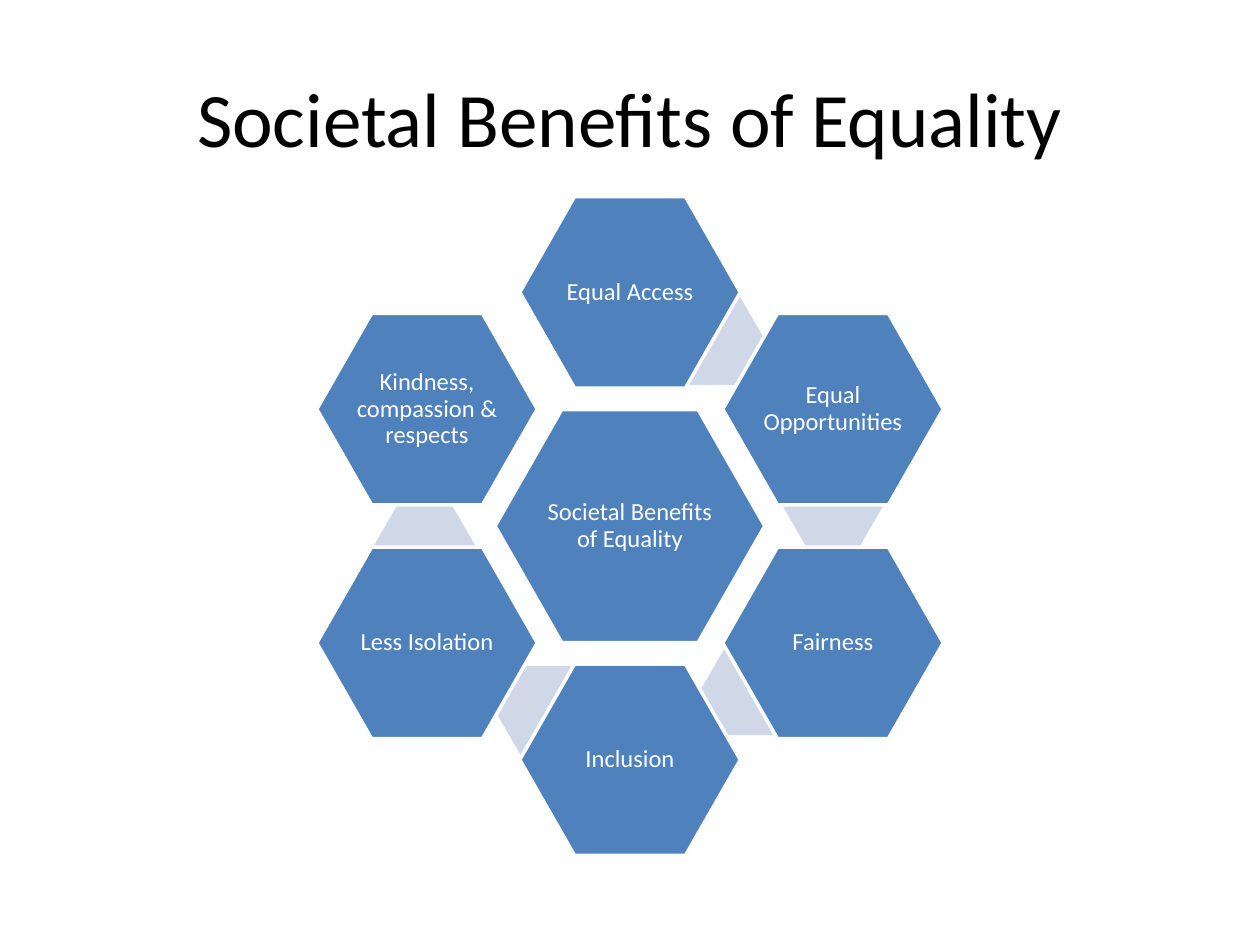
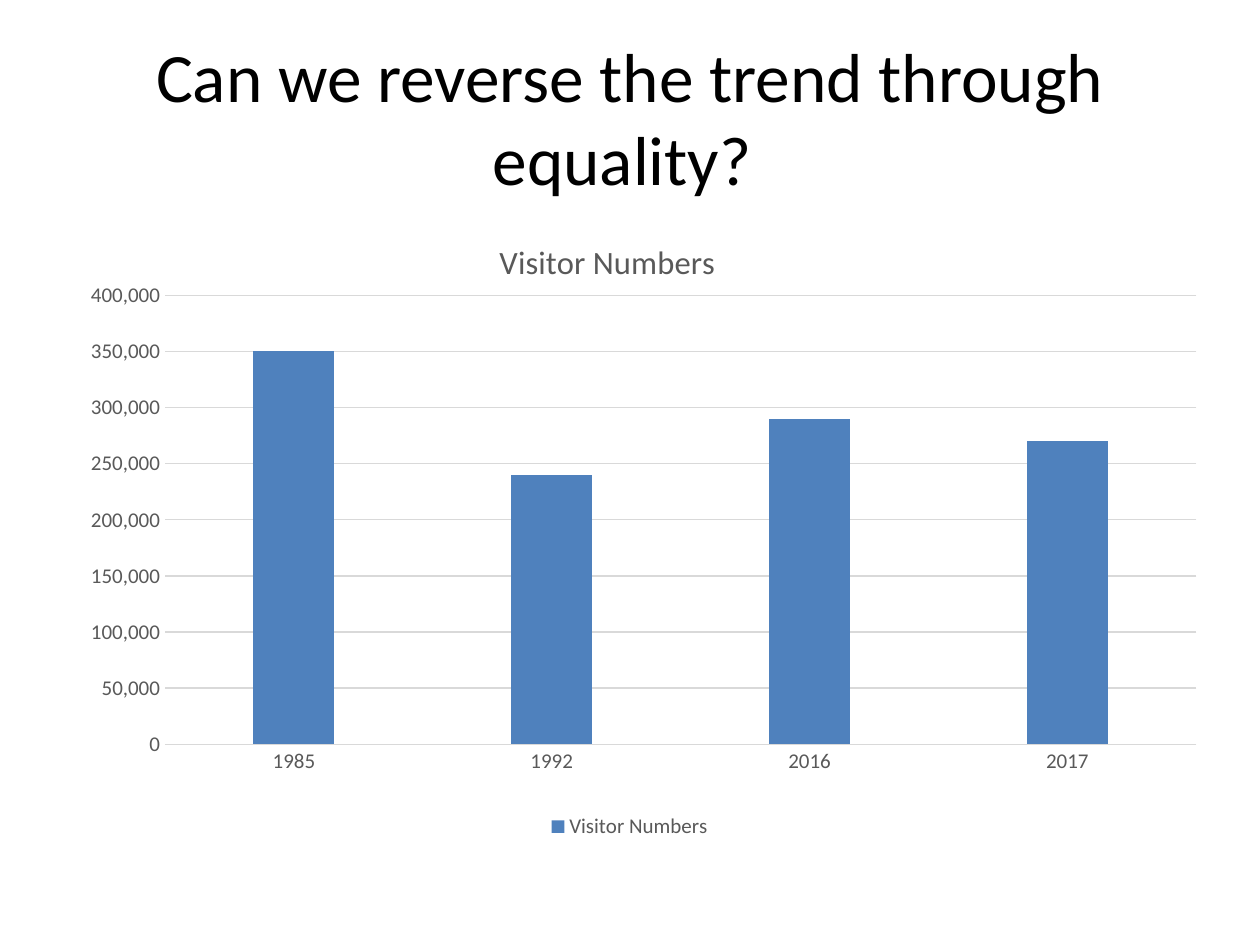
import math

from lxml import etree
from pptx import Presentation
from pptx.chart.data import CategoryChartData
from pptx.dml.color import RGBColor
from pptx.enum.chart import XL_CHART_TYPE, XL_LEGEND_POSITION, XL_TICK_MARK
from pptx.enum.shapes import MSO_SHAPE
from pptx.enum.text import MSO_ANCHOR, MSO_AUTO_SIZE, PP_ALIGN
from pptx.oxml.ns import qn
from pptx.util import Inches, Pt

HEXAGON = MSO_SHAPE.HEXAGON
COLUMNS = XL_CHART_TYPE.COLUMN_CLUSTERED
LEGEND_BOTTOM = XL_LEGEND_POSITION.BOTTOM
NO_TICKS = XL_TICK_MARK.NONE
MIDDLE = MSO_ANCHOR.MIDDLE
NO_AUTOFIT = MSO_AUTO_SIZE.NONE
CENTER = PP_ALIGN.CENTER

FONT = "Calibri"
BLACK = RGBColor(0x00, 0x00, 0x00)
WHITE = RGBColor(0xFF, 0xFF, 0xFF)
BLUE = RGBColor(0x4F, 0x81, 0xBD)
PALE_BLUE = RGBColor(0xD0, 0xD8, 0xE8)
GREY = RGBColor(0x59, 0x59, 0x59)
GRID_GREY = RGBColor(0xD9, 0xD9, 0xD9)

TITLE_BOX = (0.5, 0.3, 9, 1.25)
TITLE_ONLY = 5

BENEFITS = [
    ("Equal Access", (0.67, -1.47)),
    ("Equal Opportunities", (1.61, -0.17)),
    ("Fairness", (0.96, 1.31)),
    ("Inclusion", (-0.67, 1.46)),
    ("Less Isolation", (-1.63, 0.16)),
    ("Kindness, compassion & respects", None),
]
VISITORS = {"1985": 350000, "1992": 240000, "2016": 290000, "2017": 270000}


def style_font(font, size, color):
    font.name = FONT
    font.size = Pt(size)
    font.color.rgb = color
    font.bold = False


def write(frame, text, size=14, color=WHITE, spacing=None):
    paragraph = frame.paragraphs[0]
    paragraph.alignment = CENTER
    paragraph.line_spacing = spacing
    run = paragraph.add_run()
    run.text = text
    style_font(run.font, size, color)


def add_titled_slide(deck, text, size):
    slide = deck.slides.add_slide(deck.slide_layouts[TITLE_ONLY])
    title = slide.shapes.title
    title.left, title.top, title.width, title.height = map(Inches, TITLE_BOX)
    frame = title.text_frame
    frame.auto_size = NO_AUTOFIT
    frame.vertical_anchor = MIDDLE
    write(frame, text, size=size, color=BLACK)
    return slide


def add_hexagon(slide, center_x, center_y, width, height, fill, slant):
    hexagon = slide.shapes.add_shape(
        HEXAGON,
        Inches(center_x - width / 2),
        Inches(center_y - height / 2),
        Inches(width),
        Inches(height),
    )
    hexagon.adjustments[0] = slant
    hexagon.shadow.inherit = False
    hexagon.fill.solid()
    hexagon.fill.fore_color.rgb = fill
    hexagon.line.fill.background()
    return hexagon


def add_benefit(slide, center_x, center_y, width, height, text):
    benefit = add_hexagon(slide, center_x, center_y, width, height, BLUE, 0.286)
    benefit.line.color.rgb = WHITE
    benefit.line.width = Pt(2)
    frame = benefit.text_frame
    frame.word_wrap = True
    frame.vertical_anchor = MIDDLE
    frame.margin_left = frame.margin_right = Inches(0.02)
    frame.margin_top = frame.margin_bottom = Inches(0.02)
    write(frame, text, spacing=0.9)


def add_benefit_ring(slide, left, top, width, height):
    center_x, center_y = left + width / 2, top + height / 2
    petal_width, petal_height = 1.75, 1.52
    radius_x, radius_y = 1.86, (height - petal_height) / 2
    add_benefit(slide, center_x, center_y, 2.14, 1.85, "Societal Benefits of Equality")
    for position, (benefit, link_offset) in enumerate(BENEFITS):
        if link_offset:
            dx, dy = link_offset
            add_hexagon(slide, center_x + dx, center_y + dy, 0.81, 0.7, PALE_BLUE, 0.289)
        angle = math.radians(60 * position)
        add_benefit(
            slide,
            center_x + radius_x * math.sin(angle),
            center_y - radius_y * math.cos(angle),
            petal_width,
            petal_height,
            benefit,
        )


def set_layout(parent, index, **settings):
    for existing in parent.findall(qn("c:layout")):
        parent.remove(existing)
    layout = etree.Element(qn("c:layout"))
    manual = etree.SubElement(layout, qn("c:manualLayout"))
    for tag, value in settings.items():
        etree.SubElement(manual, qn(f"c:{tag}")).set("val", str(value))
    parent.insert(index, layout)


def style_axis(axis):
    axis.major_tick_mark = axis.minor_tick_mark = NO_TICKS
    style_font(axis.tick_labels.font, 12, GREY)


def style_rule(line):
    line.color.rgb = GRID_GREY
    line.width = Pt(0.75)


def add_visitor_chart(slide, left, top, width, height):
    data = CategoryChartData(number_format="#,##0")
    data.categories = list(VISITORS)
    data.add_series("Visitor Numbers", list(VISITORS.values()))
    box = map(Inches, (left, top, width, height))
    chart = slide.shapes.add_chart(COLUMNS, *box, data).chart
    style_font(chart.font, 10, BLACK)

    chart.has_title = True
    heading = chart.chart_title
    write(heading.text_frame, "Visitor Numbers", size=18.6, color=GREY)
    heading.include_in_layout = False
    set_layout(heading._element, 1, xMode="edge", yMode="edge", x=0.38, y=0.02)

    chart.has_legend = True
    chart.legend.position = LEGEND_BOTTOM
    chart.legend.include_in_layout = False
    style_font(chart.legend.font, 12, GREY)

    plot = chart.plots[0]
    plot.gap_width = 219
    plot.overlap = -27
    plot.vary_by_categories = False
    visitors = plot.series[0]
    visitors.format.fill.solid()
    visitors.format.fill.fore_color.rgb = BLUE
    visitors.invert_if_negative = False

    years, counts = chart.category_axis, chart.value_axis
    style_axis(years)
    style_rule(years.format.line)
    style_axis(counts)
    counts.format.line.fill.background()
    counts.has_major_gridlines = True
    style_rule(counts.major_gridlines.format.line)
    counts.minimum_scale, counts.maximum_scale = 0, 400000
    counts.major_unit = 50000
    counts.tick_labels.number_format = "#,##0"
    counts.tick_labels.number_format_is_linked = False

    plot_area = chart._chartSpace.chart.plotArea
    set_layout(plot_area, 0, layoutTarget="inner", xMode="edge", yMode="edge",
               x=0.09, y=0.12, w=0.91, h=0.72)


def main():
    deck = Presentation()
    deck.slide_width, deck.slide_height = Inches(10), Inches(7.5)
    benefits = add_titled_slide(deck, "Societal Benefits of Equality", 44)
    add_benefit_ring(benefits, 2.51, 1.56, 4.98, 5.23)
    trend = add_titled_slide(deck, "Can we reverse the trend through equality? ", 39.6)
    add_visitor_chart(trend, 0.5, 1.75, 9, 4.95)
    deck.save("out.pptx")


if __name__ == "__main__":
    main()
